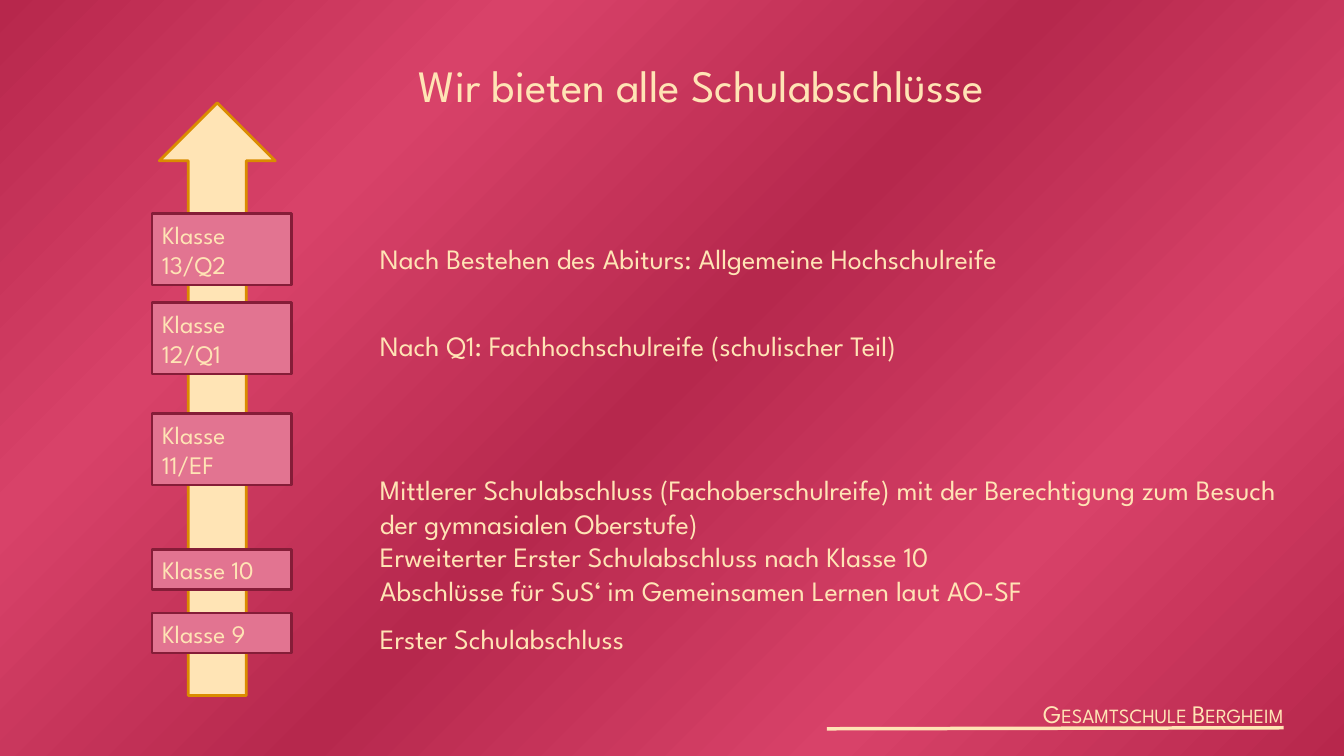
from dataclasses import dataclass

from lxml import etree
from pptx import Presentation
from pptx.dml.color import RGBColor
from pptx.enum.shapes import MSO_CONNECTOR, MSO_SHAPE
from pptx.enum.text import MSO_ANCHOR, PP_ALIGN
from pptx.oxml.ns import qn
from pptx.util import Pt

PX = 9144  # EMU per px, 100 px to the inch
TITLE_ONLY = 5
UP_ARROW, RECTANGLE = MSO_SHAPE.UP_ARROW, MSO_SHAPE.RECTANGLE
STRAIGHT = MSO_CONNECTOR.STRAIGHT
TOP, MIDDLE = MSO_ANCHOR.TOP, MSO_ANCHOR.MIDDLE
LEFT, CENTER, RIGHT = PP_ALIGN.LEFT, PP_ALIGN.CENTER, PP_ALIGN.RIGHT


@dataclass(frozen=True)
class Theme:
    font: str = "League Spartan"
    cream: str = "FFE4B5"
    arrow_line: str = "DA8C00"
    grade_fill: str = "E27491"
    grade_line: str = "851D38"
    gradient: tuple = ("B7274C", "D84269", "B6284D", "D84269", "B7274C")
    title_size: int = 32
    body_size: int = 20
    label_size: int = 18


theme = Theme()


def px(*lengths):
    return [length * PX for length in lengths]


def write(box, lines, size, align=LEFT, anchor=MIDDLE):
    """Fill the box with one paragraph per line, in the slide's font and text colour."""
    frame = box.text_frame
    frame.word_wrap = True
    frame.vertical_anchor = anchor
    frame.text = "\n".join(lines)
    for para in frame.paragraphs:
        para.alignment = align
        para.font.name = theme.font
        para.font.size = Pt(size)
        para.font.color.rgb = RGBColor.from_string(theme.cream)


deck = Presentation()
deck.slide_width, deck.slide_height = px(1333, 750)
slide = deck.slides.add_slide(deck.slide_layouts[TITLE_ONLY])
shapes = slide.shapes

# Diagonal background gradient with evenly spaced stops
background = slide.background.fill
background.gradient()
background.gradient_angle = 315
stops = slide.element.find(".//" + qn("a:gsLst"))
for stop in list(stops):
    stops.remove(stop)
for index, color in enumerate(theme.gradient):
    stop = etree.SubElement(stops, qn("a:gs"), pos=str(index * 25000))
    etree.SubElement(stop, qn("a:srgbClr"), val=color)

# Title
title = shapes.title
title.left, title.top, title.width, title.height = px(308, 52, 776, 64)
write(title, ["Wir bieten alle Schulabschlüsse"], theme.title_size, CENTER, TOP)

# School name with its underline
school = shapes.add_textbox(*px(859, 688, 414, 40))
write(school, ["Gesamtschule Bergheim"], theme.label_size, RIGHT, TOP)
school.text_frame.margin_right = 0
school.text_frame.paragraphs[0].runs[0].font._element.set("cap", "small")

underline = shapes.add_connector(STRAIGHT, *px(820, 723, 1273, 722))
underline.line.color.rgb = RGBColor.from_string(theme.cream)
underline.line.width = Pt(2.5)
etree.SubElement(underline._element.spPr, qn("a:effectLst"))

# Arrow with the grades stacked on it: kind, place, fill, line, line width, label
grades = [
    ("Klasse 9", 608, 40),
    ("Klasse 10", 545, 40),
    ("Klasse 11/EF", 410, 71),
    ("Klasse 12/Q1", 300, 71),
    ("Klasse 13/Q2", 212, 71),
]
ladder = [(UP_ARROW, (158, 102, 115, 588), theme.cream, theme.arrow_line, 2, "")]
for label, top, height in grades:
    place = (151, top, 138, height)
    ladder.append((RECTANGLE, place, theme.grade_fill, theme.grade_line, 1.75, label))

for kind, place, fill, line, line_width, label in ladder:
    step = shapes.add_shape(kind, *px(*place))
    step.shadow.inherit = False
    step.fill.solid()
    step.fill.fore_color.rgb = RGBColor.from_string(fill)
    step.line.color.rgb = RGBColor.from_string(line)
    step.line.width = Pt(line_width)
    if label:
        write(step, [label], theme.label_size)

# Qualifications beside the grades
qualifications = [
    (611, 484, 44, ["Erster Schulabschluss"]),
    (463, 945, 145, [
        "Mittlerer Schulabschluss (Fachoberschulreife) mit der Berechtigung "
        "zum Besuch der gymnasialen Oberstufe)",
        "Erweiterter Erster Schulabschluss nach Klasse 10",
        "Abschlüsse für SuS‘ im Gemeinsamen Lernen laut AO-SF",
    ]),
    (234, 815, 44, ["Nach Bestehen des Abiturs: Allgemeine Hochschulreife"]),
    (321, 776, 44, ["Nach Q1: Fachhochschulreife (schulischer Teil)"]),
]
for top, width, height, lines in qualifications:
    write(shapes.add_textbox(*px(367, top, width, height)), lines, theme.body_size)

deck.save("out.pptx")
